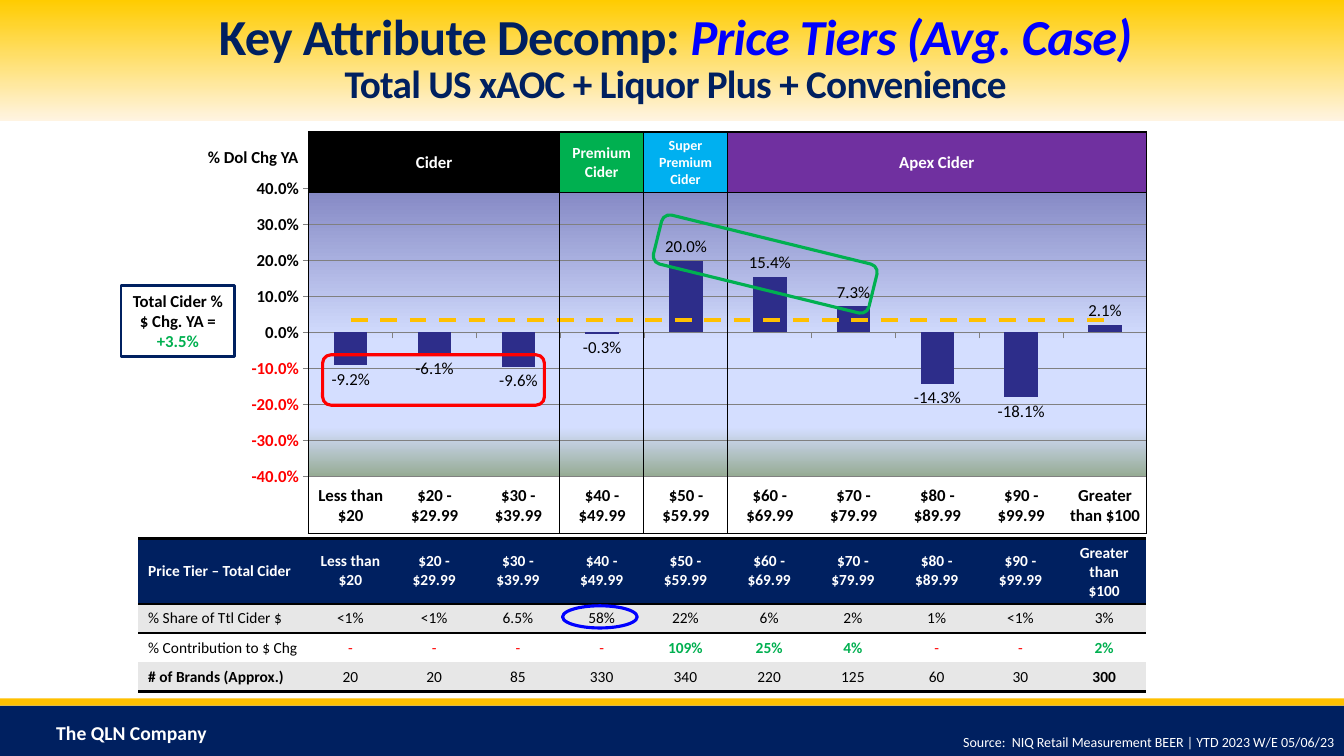
from dataclasses import dataclass
from pptx import Presentation
from pptx.chart.data import CategoryChartData
from pptx.dml.color import RGBColor
from pptx.enum.chart import XL_CHART_TYPE, XL_LABEL_POSITION, XL_TICK_LABEL_POSITION, XL_TICK_MARK
from pptx.enum.dml import MSO_LINE
from pptx.enum.shapes import MSO_SHAPE
from pptx.enum.text import MSO_ANCHOR, PP_ALIGN
from pptx.oxml import parse_xml
from pptx.oxml.ns import nsdecls, qn
from pptx.util import Inches, Pt


@dataclass(frozen=True)
class Theme:
    font: str = "Calibri"
    navy: str = "002060"
    gold: str = "FFC000"
    header_top: str = "FFCC00"
    header_bottom: str = "FFF4E2"
    blue: str = "0000FF"
    green: str = "00B050"
    sky: str = "00B0F0"
    purple: str = "7030A0"
    red: str = "FF0000"
    bar: str = "2D2D8A"
    grid: str = "808080"
    band: str = "E7E7E7"
    white: str = "FFFFFF"
    black: str = "000000"
    title: int = 36
    subtitle: int = 28
    brand: int = 14
    body: int = 12
    table: int = 11
    small: int = 10


T = Theme()
W, H = 13.33, 7.5
LABEL_COL, TIER_COL = 1.69, 0.831
TABLE_X = 1.37
PLOT_X = TABLE_X + LABEL_COL
PLOT_W = 10 * TIER_COL
PLOT_GRADIENT = [(0, "8488C4"), (53, "D4DEFF"), (83, "D4DEFF"), (100, "96AB94")]
NO_STYLE = "{2D5ABB26-0587-4C30-8999-92F81FD0307C}"

TIERS = ["Less than $20", *(f"${low} - ${low + 9}.99" for low in range(20, 100, 10)), "Greater than $100"]
CHANGES = [-0.092, -0.061, -0.096, -0.003, 0.2, 0.154, 0.073, -0.143, -0.181, 0.021]
TOTAL_CHANGE = 0.035
SEGMENTS = [("Cider", 3, T.black, T.body), ("Premium\nCider", 1, T.green, T.table),
            ("Super Premium Cider", 1, T.sky, T.small), ("Apex Cider", 5, T.purple, T.body)]
ROWS = [["Price Tier – Total Cider", *TIERS],
        ["% Share of Ttl Cider $", "<1%", "<1%", "6.5%", "58%", "22%", "6%", "2%", "1%", "<1%", "3%"],
        ["% Contribution to $ Chg", "-", "-", "-", "-", "109%", "25%", "4%", "-", "-", "2%"],
        ["# of Brands (Approx.)", "20", "20", "85", "330", "340", "220", "125", "60", "30", "300"]]


def rgb(color):
    return RGBColor.from_string(color)


def inches(box):
    return [Inches(v) for v in box]


def style(font, size, color=T.black, bold=False):
    font.name, font.size, font.bold = T.font, Pt(size), bold
    font.color.rgb = rgb(color)


def write(tf, text, size, color=T.black, bold=False, align=PP_ALIGN.LEFT):
    tf.word_wrap = True
    tf.text = text
    for p in tf.paragraphs:
        p.alignment = align
        style(p.font, size, color, bold)


def add_text(s, box, *args, **kwargs):
    tf = s.shapes.add_textbox(*inches(box)).text_frame
    write(tf, *args, **kwargs)
    return tf


def add_box(s, kind, box, fill=None, line=None, width=2.25):
    sp = s.shapes.add_shape(kind, *inches(box))
    sp.shadow.inherit = False
    if fill:
        sp.fill.solid()
        sp.fill.fore_color.rgb = rgb(fill)
    else:
        sp.fill.background()
    if line:
        sp.line.color.rgb = rgb(line)
        sp.line.width = Pt(width)
    else:
        sp.line.fill.background()
    return sp


def add_plain_table(s, box, cols, rows):
    frame = s.shapes.add_table(len(rows), len(cols), *inches(box))
    table = frame.table
    table.first_row = table.horz_banding = False
    table._tbl.tblPr.find(qn("a:tableStyleId")).text = NO_STYLE
    for col, width in zip(table.columns, cols):
        col.width = Inches(width)
    for row, height in zip(table.rows, rows):
        row.height = Inches(height)
    return table


def fill_cell(cell, color):
    cell.fill.solid()
    cell.fill.fore_color.rgb = rgb(color)
    cell.vertical_anchor = MSO_ANCHOR.MIDDLE


def border(cell, sides, width):
    tcPr = cell._tc.get_or_add_tcPr()
    for i, side in enumerate(sides):
        tcPr.insert(i, parse_xml(
            f'<a:ln{side} {nsdecls("a")} w="{Pt(width)}"><a:solidFill>'
            f'<a:srgbClr val="{T.black}"/></a:solidFill></a:ln{side}>'))


def header(s, box):
    x, y, w, h = box
    band = add_box(s, MSO_SHAPE.RECTANGLE, box, T.header_top)
    band.fill.gradient()
    band.fill.gradient_angle = 270
    for stop, color in zip(band.fill.gradient_stops, (T.header_top, T.header_bottom)):
        stop.color.rgb = rgb(color)
    tf = s.shapes.add_textbox(*inches((x + 1.2, y + 0.1, 11, h - 0.2))).text_frame
    tf.word_wrap, tf.vertical_anchor = True, MSO_ANCHOR.MIDDLE
    p = tf.paragraphs[0]
    p.alignment, p.line_spacing = PP_ALIGN.CENTER, 0.85
    for text, size, color, italic in (
            ("Key Attribute Decomp: ", T.title, T.navy, False),
            ("Price Tiers (Avg. Case)", T.title, T.blue, True),
            ("Total US xAOC + Liquor Plus + Convenience", T.subtitle, T.navy, False)):
        if size == T.subtitle:
            p.add_line_break()
        r = p.add_run()
        r.text = text
        style(r.font, size, color, True)
        r.font.italic = italic
        r._r.get_or_add_rPr().set("spc", "-50")


def footer(s, box):
    x, y, w, h = box
    add_box(s, MSO_SHAPE.RECTANGLE, (x, y + 0.07, w, h - 0.07), T.navy)
    add_box(s, MSO_SHAPE.RECTANGLE, (x, y, w, 0.07), T.gold)
    brand = add_text(s, (x + 0.46, y + 0.2, 2.5, 0.27), "The QLN Company", T.brand, T.white, True)
    brand.vertical_anchor = MSO_ANCHOR.MIDDLE
    add_text(s, (w - 8.18, y + 0.3, 8.18, 0.27),
             "Source:  NIQ Retail Measurement BEER | YTD 2023 W/E 05/06/23",
             T.small, T.white, align=PP_ALIGN.RIGHT)


def move_last_series_to_line(plot_area):
    bars = plot_area.find(qn("c:barChart"))
    ser = bars.findall(qn("c:ser"))[-1]
    for invert in ser.findall(qn("c:invertIfNegative")):
        ser.remove(invert)
    ser.find(qn("c:cat")).addprevious(parse_xml(f'<c:marker {nsdecls("c")}><c:symbol val="none"/></c:marker>'))
    ser.append(parse_xml(f'<c:smooth {nsdecls("c")} val="0"/>'))
    axes = "".join(f'<c:axId val="{a.get("val")}"/>' for a in bars.findall(qn("c:axId")))
    line = parse_xml(f'<c:lineChart {nsdecls("c")}><c:grouping val="standard"/><c:varyColors val="0"/>'
                     f'<c:marker val="1"/>{axes}</c:lineChart>')
    line.insert(2, ser)
    bars.addnext(line)


def change_chart(s, box):
    data = CategoryChartData(number_format="0.0%")
    data.categories = TIERS
    data.add_series("% Dol Chg YA", CHANGES)
    data.add_series("Total Cider", [TOTAL_CHANGE] * len(TIERS))
    chart = s.shapes.add_chart(XL_CHART_TYPE.COLUMN_CLUSTERED, *inches(box), data).chart
    chart.has_legend = chart.has_title = False
    style(chart.font, T.body)
    plot = chart.plots[0]
    plot.gap_width, plot.vary_by_categories = 150, False
    bars, total = plot.series
    bars.format.fill.solid()
    bars.format.fill.fore_color.rgb = rgb(T.bar)
    bars.invert_if_negative = False
    labels = bars.data_labels
    labels.show_value, labels.position = True, XL_LABEL_POSITION.OUTSIDE_END
    labels.number_format, labels.number_format_is_linked = "0.0%", False
    style(labels.font, T.body)
    total.format.line.color.rgb = rgb(T.gold)
    total.format.line.width, total.format.line.dash_style = Pt(3), MSO_LINE.DASH
    cat, val = chart.category_axis, chart.value_axis
    cat.tick_label_position = XL_TICK_LABEL_POSITION.LOW
    val.minimum_scale, val.maximum_scale, val.major_unit = -0.4, 0.4, 0.1
    val.tick_labels.number_format = r"0.0%;[Red]\-0.0%"
    val.tick_labels.number_format_is_linked = False
    for axis in (cat, val):
        axis.major_tick_mark = XL_TICK_MARK.OUTSIDE
        axis.format.line.color.rgb = rgb(T.grid)
        style(axis.tick_labels.font, T.body, bold=True)
    val.major_gridlines.format.line.color.rgb = rgb(T.grid)

    area = chart._chartSpace.chart.plotArea
    move_last_series_to_line(area)
    for old in area.findall(qn("c:layout")):
        area.remove(old)
    place = "".join(f'<c:{k} val="{v}"/>' for k, v in (
        ("layoutTarget", "inner"), ("xMode", "edge"), ("yMode", "edge"),
        ("x", 0.166), ("y", 0.035), ("w", 0.815), ("h", 0.815)))
    area.insert(0, parse_xml(f'<c:layout {nsdecls("c")}><c:manualLayout>{place}</c:manualLayout></c:layout>'))
    stops = "".join(f'<a:gs pos="{pos * 1000}"><a:srgbClr val="{c}"/></a:gs>' for pos, c in PLOT_GRADIENT)
    area.append(parse_xml(f'<c:spPr {nsdecls("c", "a")}><a:gradFill><a:gsLst>{stops}</a:gsLst>'
                          '<a:lin ang="5400000" scaled="0"/></a:gradFill></c:spPr>'))


def segment_frame(s, box):
    head = 0.6
    table = add_plain_table(s, box, [n * TIER_COL for _, n, _, _ in SEGMENTS], [head, box[3] - head])
    for i, (name, _, color, size) in enumerate(SEGMENTS):
        cell = table.cell(0, i)
        write(cell.text_frame, name, size, T.white, True, PP_ALIGN.CENTER)
        fill_cell(cell, color)
        for row in range(2):
            border(table.cell(row, i), "LRTB", 1)


def tier_table(s, box):
    table = add_plain_table(s, box, [LABEL_COL] + [TIER_COL] * 10, [0.65] + [0.29] * 3)
    for i, row in enumerate(ROWS):
        for j, text in enumerate(row):
            cell = table.cell(i, j)
            gain = i == 2 and j > 0 and text != "-"
            color = T.white if i == 0 else T.green if gain else T.red if text == "-" else T.black
            bold = i == 0 or gain or (i == 3 and j in (0, 10))
            write(cell.text_frame, text, T.table, color, bold, PP_ALIGN.CENTER if j else PP_ALIGN.LEFT)
            fill_cell(cell, (T.navy, T.band, T.white, T.band)[i])
            border(cell, ("TB", "T", "", "B")[i], 2)


def total_callout(s, box):
    tf = add_box(s, MSO_SHAPE.RECTANGLE, box, T.white, T.navy, 2).text_frame
    write(tf, "Total Cider % $ Chg. YA =\n+3.5%", T.body, bold=True, align=PP_ALIGN.CENTER)
    tf.paragraphs[1].font.color.rgb = rgb(T.green)


def highlights(s):
    add_box(s, MSO_SHAPE.ROUNDED_RECTANGLE, (3.2, 3.52, 2.2, 0.5), line=T.red)
    add_box(s, MSO_SHAPE.ROUNDED_RECTANGLE, (6.49, 2.37, 2.2, 0.5), line=T.green).rotation = 13.8
    add_box(s, MSO_SHAPE.OVAL, (5.58, 6.01, 0.74, 0.22), line=T.blue)


def main():
    prs = Presentation()
    prs.slide_width, prs.slide_height = Inches(W), Inches(H)
    s = prs.slides.add_slide(prs.slide_layouts[6])
    header(s, (0, 0, W, 1.2))
    footer(s, (0, 6.93, W, H - 6.93))
    change_chart(s, (TABLE_X, 1.75, 10.2, 3.5))
    add_text(s, (PLOT_X - 1.3, 1.41, 1.3, 0.3), "% Dol Chg YA", T.body, bold=True, align=PP_ALIGN.RIGHT)
    tier_table(s, (TABLE_X, 5.34, LABEL_COL + PLOT_W, 1.52))
    total_callout(s, (1.2, 2.83, 1.13, 0.71))
    segment_frame(s, (PLOT_X, 1.31, PLOT_W, 3.98))
    highlights(s)
    prs.save("out.pptx")


if __name__ == "__main__":
    main()
